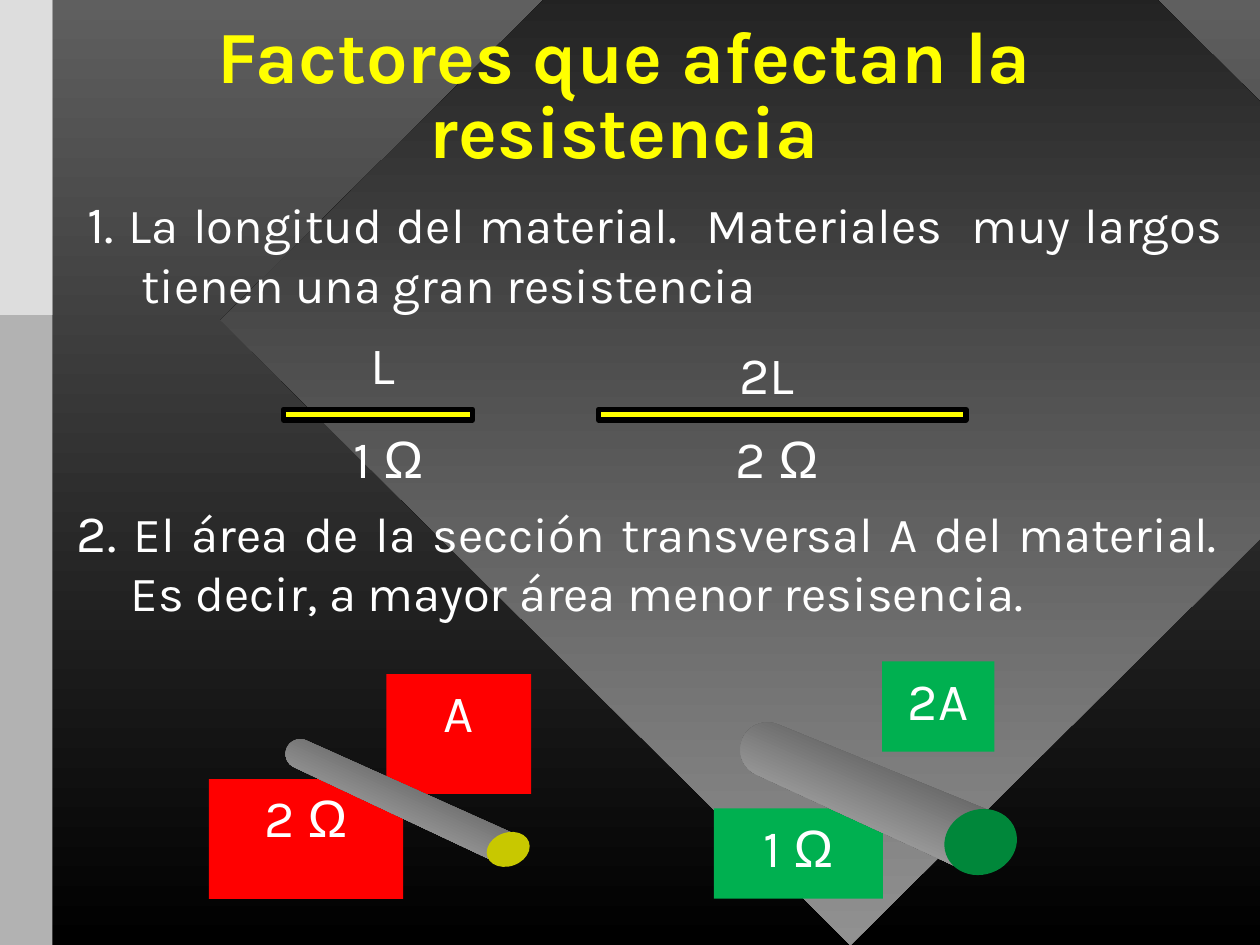
import math

import pptx
import pptx.dml.color
import pptx.enum.shapes
import pptx.enum.text
import pptx.oxml.ns
import pptx.util
from lxml import etree

COLUMNS, ROWS = 120, 90
CELL = pptx.util.Inches(10) / COLUMNS
SHAPES = pptx.enum.shapes.MSO_SHAPE
ALIGN = pptx.enum.text.PP_ALIGN
ANCHOR = pptx.enum.text.MSO_ANCHOR
WHITE, YELLOW, RED, GREEN = "FFFFFF", "FFFF00", "FF0000", "00B050"


def cells(*counts):
    """Turn counts of grid cells into lengths."""
    return [pptx.util.Emu(round(count * CELL)) for count in counts]


def color(hex_code):
    """Turn a hex string into a colour."""
    return pptx.dml.color.RGBColor.from_string(hex_code)


def shade(fill, top, bottom, start=0):
    """Fill with a gradient running from top to bottom."""
    fill.gradient()
    fill.gradient_angle = 270
    for stop, hex_code, position in zip(fill.gradient_stops, (top, bottom), (start, 1)):
        stop.color.rgb = color(hex_code)
        stop.position = position


def add_block(slide, kind, area, hex_code):
    """Add a plain filled shape on the grid."""
    block = slide.shapes.add_shape(kind, *cells(*area))
    block.shadow.inherit = False
    block.fill.solid()
    block.fill.fore_color.rgb = color(hex_code)
    block.line.fill.background()
    return block


def format_run(run, size, hex_code=WHITE, bold=False):
    """Set the font of a run, with Arial for the ohm sign."""
    run.font.name = "Arial" if run.text == "Ω" else "Karla"
    run.font.size = pptx.util.Pt(size)
    run.font.bold = bold
    run.font.color.rgb = color(hex_code)


def write_value(shape, value):
    """Write a centred value, with its unit in a run of its own."""
    frame = shape.text_frame
    frame.word_wrap = True
    frame.vertical_anchor = ANCHOR.TOP
    paragraph = frame.paragraphs[0]
    paragraph.alignment = ALIGN.CENTER
    number, unit, _ = value.partition("Ω")
    for part in filter(None, (number, unit)):
        run = paragraph.add_run()
        run.text = part
        format_run(run, 30)


def add_label(slide, area, value):
    """Add a value without a background."""
    write_value(slide.shapes.add_textbox(*cells(*area)), value)


def add_tile(slide, area, value, hex_code):
    """Add a value on a coloured tile."""
    write_value(add_block(slide, SHAPES.RECTANGLE, area, hex_code), value)


def add_wire(slide, left, width):
    """Add a thin outlined wire."""
    wire = add_block(slide, SHAPES.RECTANGLE, (left, 39, width, 1), YELLOW)
    wire.line.color.rgb = color("000000")
    wire.line.width = pptx.util.Pt(3)


def add_rod(slide, back, back_radius, front, front_radii, face_color):
    """Add a tapered rod with a round back and a coloured front face."""
    run, rise = front[0] - back[0], front[1] - back[1]
    length, angle = math.hypot(run, rise), math.atan2(rise, run)
    middle = (length - back_radius) / 2
    center_x = back[0] + middle * math.cos(angle)
    center_y = back[1] + middle * math.sin(angle)
    turns = [math.radians(degrees) for degrees in range(90, 271, 10)]
    outline = [(back_radius * math.cos(turn), back_radius * math.sin(turn)) for turn in turns]
    outline += [(length, -front_radii[1]), (length, front_radii[1])]
    points = [cells(center_x + x - middle, center_y + y) for x, y in outline]
    builder = slide.shapes.build_freeform(*points[0])
    builder.add_line_segments(points[1:])
    side = builder.convert_to_shape()
    side.shadow.inherit = False
    side.line.fill.background()
    side.rotation = math.degrees(angle)
    shade(side.fill, "606060", "D8D8D8", 0.3)
    across, down = front_radii
    area = (front[0] - across, front[1] - down, 2 * across, 2 * down)
    add_block(slide, SHAPES.OVAL, area, face_color).rotation = -20


def place(placeholder, area, anchor):
    """Move a placeholder on the grid and fix its text fitting."""
    placeholder.left, placeholder.top, placeholder.width, placeholder.height = cells(*area)
    frame = placeholder.text_frame
    frame.auto_size = pptx.enum.text.MSO_AUTO_SIZE.NONE
    frame.vertical_anchor = anchor
    return frame.paragraphs[0]


def write_title(slide, title):
    """Write the slide title."""
    paragraph = place(slide.shapes.title, (4.2, 5, 110.5, 8.8), ANCHOR.MIDDLE)
    paragraph.text = title
    paragraph.alignment = ALIGN.CENTER
    paragraph.line_spacing = 0.85
    format_run(paragraph.runs[0], 42, YELLOW, True)


def write_factor(placeholder, area, number, statement):
    """Write a numbered statement with a hanging indent."""
    paragraph = place(placeholder, area, ANCHOR.TOP)
    properties = paragraph._p.get_or_add_pPr()
    hang = pptx.util.Inches(0.43)
    properties.set("marL", str(hang))
    properties.set("indent", str(-hang))
    etree.SubElement(properties, pptx.oxml.ns.qn("a:buNone"))
    paragraph.alignment = ALIGN.JUSTIFY
    paragraph.space_before = pptx.util.Pt(0)
    for part, size in ((number, 30), (statement, 28)):
        run = paragraph.add_run()
        run.text = part
        format_run(run, size)


def add_backdrop(slide):
    """Add the shaded background, the diamond and the side band."""
    shade(slide.background.fill, "5F5F5F", "000000")
    diamond = add_block(slide, SHAPES.DIAMOND, (21, -29, 120, 119), "000000")
    shade(diamond.fill, "000000", "919191")
    band = add_block(slide, SHAPES.RECTANGLE, (0, 0, 5, ROWS), "B2B2B2")
    band_top = add_block(slide, SHAPES.RECTANGLE, (0, 0, 5, ROWS / 3), "DDDDDD")
    for layer in (diamond, band, band_top):
        slide.shapes.title._element.addprevious(layer._element)


def main():
    """Build the slide about electrical resistance."""
    deck = pptx.Presentation()
    deck.slide_width, deck.slide_height = cells(COLUMNS, ROWS)
    slide = deck.slides.add_slide(deck.slide_layouts.get_by_name("Two Content"))
    add_backdrop(slide)
    write_title(slide, "Factores que afectan la resistencia")
    write_factor(slide.placeholders[1], (7.1, 17.6, 110.5, 13), "1.",
                 " La longitud del material.  Materiales  muy largos tienen una gran resistencia")
    write_factor(slide.placeholders[2], (6.1, 47, 111, 13), "2. ",
                 "El área de la sección transversal A del material. "
                 "Es decir, a mayor área menor resisencia.")

    add_wire(slide, 27, 18)
    add_label(slide, (31, 40, 12, 6.8), "1 Ω")
    add_label(slide, (33, 31, 7, 6.8), "L")
    add_wire(slide, 57, 35)
    add_label(slide, (68, 40, 12, 6.8), "2 Ω")
    add_label(slide, (69, 32, 8, 6.8), "2L")

    add_tile(slide, (19.9, 74.2, 18.5, 11.4), "2 Ω", RED)
    add_tile(slide, (36.8, 64.2, 13.8, 11.4), "A", RED)
    add_rod(slide, (28.6, 71.8), 1.4, (48.4, 80.9), (2.1, 1.6), "C8C800")
    add_tile(slide, (68, 77, 16.1, 8.6), "1 Ω", GREEN)
    add_tile(slide, (84, 63, 10.7, 8.6), "2A", GREEN)
    add_rod(slide, (73.1, 71.4), 2.6, (93.4, 80.2), (3.5, 3.1), "00873A")
    deck.save("out.pptx")


if __name__ == "__main__":
    main()
